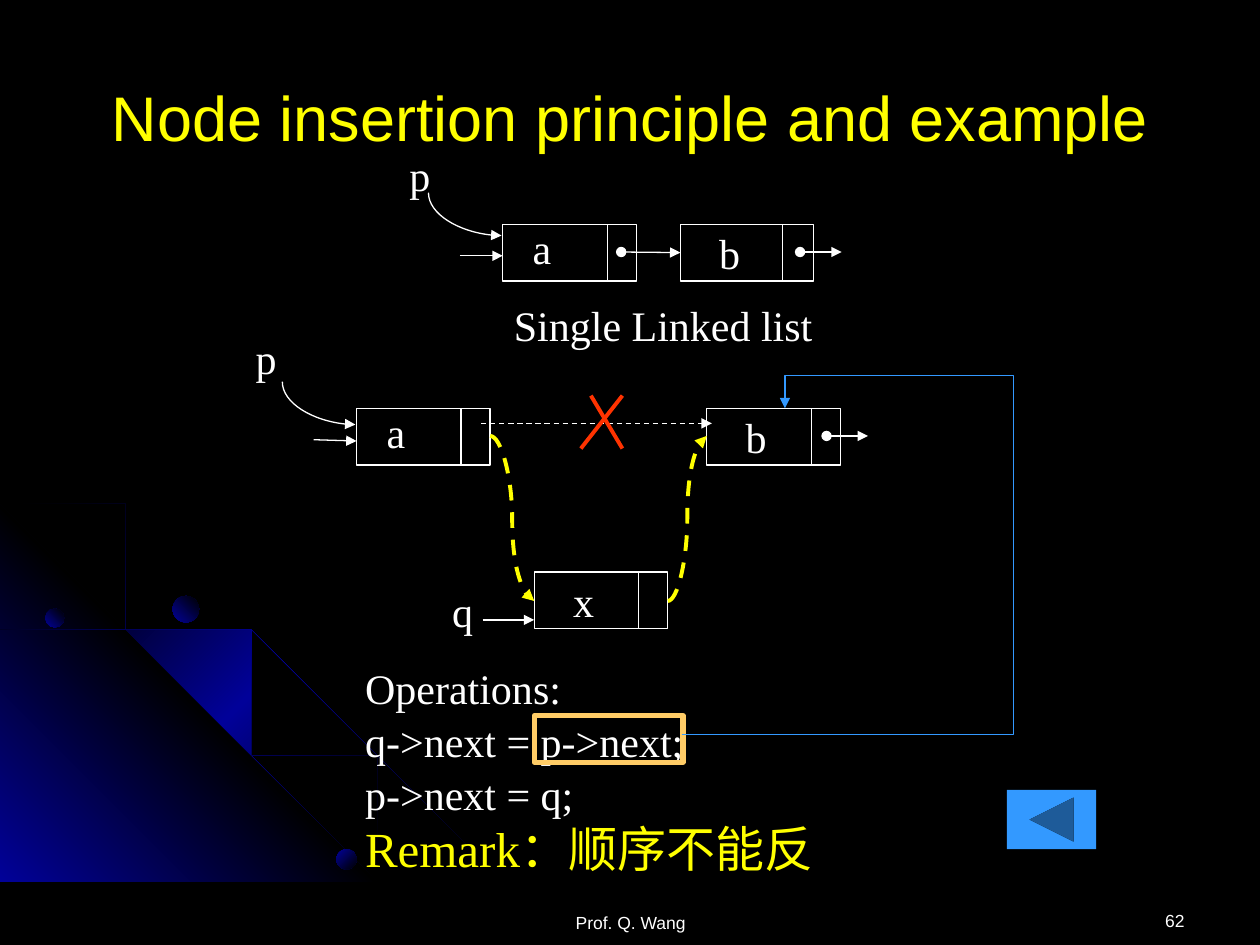
from dataclasses import dataclass
from typing import Optional

from lxml.etree import SubElement
from pptx import Presentation
from pptx.dml.color import RGBColor as RGB
from pptx.enum.dml import MSO_LINE_DASH_STYLE as Dash
from pptx.enum.shapes import MSO_CONNECTOR as Link, MSO_SHAPE as Kind
from pptx.enum.text import MSO_ANCHOR as Anchor, PP_ALIGN as Align
from pptx.oxml.ns import qn
from pptx.util import Cm, Pt

HUES = {"black": "000000", "navy": "010199", "white": "FFFFFF", "yellow": "FFFF00",
        "red": "FF3300", "blue": "3399FF", "gold": "FFCC66"}
SERIF, SANS = "Times New Roman", "Arial"
WIDE, HIGH = 1.06, 0.45  # size of a list node


def size(inch: float) -> Cm:
    return Cm(inch * 2.54)


def hue(name: str) -> RGB:
    return RGB.from_string(HUES[name])


@dataclass
class Node:
    name: str
    x: float
    y: float
    cut: float = 0.83
    dx: float = 0.21
    dy: float = -0.04


@dataclass
class Wire:
    x1: float
    y1: float
    x2: float
    y2: float
    color: str = "white"
    width: float = 0.75
    head: Optional[str] = None
    tail: Optional[str] = "triangle"
    dash: bool = False
    kind: Link = Link.STRAIGHT
    preset: Optional[str] = None
    turn: int = 0
    bends: tuple = ()


@dataclass
class Label:
    words: str
    x: float
    y: float
    w: float = 0.37
    pt: float = 24
    font: str = SERIF
    align: Align = Align.LEFT
    top: float = 0.05


deck = Presentation()
deck.slide_width, deck.slide_height = size(10), size(7.5)
slide = deck.slides.add_slide(deck.slide_layouts[5])
slide.background.fill.solid()
slide.background.fill.fore_color.rgb = hue("black")
shapes = slide.shapes


def add_run(par, words: str, pt: float, font: str, color: str) -> None:
    run = par.add_run()
    run.text = words
    run.font.size, run.font.name = Pt(pt), font
    run.font.color.rgb = hue(color)


def add_box(kind: Kind, x: float, y: float, w: float, h: float):
    box = shapes.add_shape(kind, size(x), size(y), size(w), size(h))
    box.shadow.inherit = False
    box.fill.background()
    box.line.fill.background()
    return box


def add_frame(x: float, y: float, w: float, h: float, color: str, width: float):
    box = add_box(Kind.RECTANGLE, x, y, w, h)
    box.line.color.rgb, box.line.width = hue(color), Pt(width)
    return box


def shade(shape, names: tuple, angle: int) -> None:
    """Fill with evenly spaced gradient stops."""
    shape.fill.solid()
    old = shape.element.spPr.find(qn("a:solidFill"))
    grad = old.makeelement(qn("a:gradFill"), {"rotWithShape": "1"})
    stops = SubElement(grad, qn("a:gsLst"))
    for i, name in enumerate(names):
        stop = SubElement(stops, qn("a:gs"), pos=str(100000 * i // (len(names) - 1)))
        SubElement(stop, qn("a:srgbClr"), val=HUES[name])
    SubElement(grad, qn("a:lin"), ang=str(angle * 60000), scaled="1")
    shape.element.spPr.replace(old, grad)


def add_path(points: list, names: tuple, angle: int) -> None:
    pen = shapes.build_freeform(*points[0], scale=float(size(1)))
    pen.add_line_segments(points[1:], close=True)
    path = pen.convert_to_shape()
    path.shadow.inherit = False
    path.line.fill.background()
    shade(path, names, angle)


def add_label(item: Label) -> None:
    box = shapes.add_textbox(size(item.x), size(item.y), size(item.w), size(0.5))
    frame = box.text_frame
    frame.word_wrap = item.font == SANS
    frame.margin_top = size(item.top)
    par = frame.paragraphs[0]
    par.alignment = item.align
    if item.font == SERIF:
        par.line_spacing = 1.05
    add_run(par, item.words, item.pt, item.font, "white")


def add_wire(item: Wire):
    wire = shapes.add_connector(item.kind, size(item.x1), size(item.y1),
                                size(item.x2), size(item.y2))
    wire.line.color.rgb, wire.line.width = hue(item.color), Pt(item.width)
    if item.dash:
        wire.line.dash_style = Dash.DASH
    props = wire.element.spPr
    for tag, end in (("a:headEnd", item.head), ("a:tailEnd", item.tail)):
        if end:
            SubElement(props.find(qn("a:ln")), qn(tag), type=end)
    SubElement(props, qn("a:effectLst"))
    geom = props.find(qn("a:prstGeom"))
    if item.preset:
        geom.set("prst", item.preset)
    for i, bend in enumerate(item.bends, 1):
        SubElement(geom.find(qn("a:avLst")), qn("a:gd"), name=f"adj{i}",
                   fmla=f"val {round(bend * 100000)}")
    if item.turn:
        props.find(qn("a:xfrm")).set("rot", str(item.turn * 60000))
    return wire


def add_node(item: Node):
    box = add_frame(item.x, item.y, WIDE, HIGH, "white", 0.75)
    cut = item.x + item.cut
    add_wire(Wire(cut, item.y, cut, item.y + HIGH, tail=None))
    add_label(Label(item.name, item.x + item.dx, item.y + item.dy))
    return box


# Backdrop: corner glow, three arcs, three beads
ARCS = [
    [(0.57, 4.47), (0, 4.35), (0, 4.38), (0.56, 4.49), (0.97, 4.61), (1.35, 4.78),
     (1.73, 4.99), (2.08, 5.23), (2.41, 5.49), (2.71, 5.79), (2.98, 6.12), (3.23, 6.49),
     (3.5, 6.98), (3.7, 7.49), (3.72, 7.49), (3.52, 6.98), (3.25, 6.48), (3, 6.11),
     (2.72, 5.78), (2.42, 5.48), (2.09, 5.21), (1.74, 4.97), (1.36, 4.77), (0.98, 4.59)],
    [(2.85, 7.14), (3.01, 7.49), (3.03, 7.49), (2.86, 7.12), (2.66, 6.76), (2.42, 6.4),
     (2.15, 6.06), (1.84, 5.76), (1.52, 5.49), (1.17, 5.26), (0.79, 5.05), (0.41, 4.88),
     (0, 4.75), (0, 4.77), (0.39, 4.9), (0.77, 5.07), (1.15, 5.28), (1.5, 5.51),
     (1.83, 5.78), (2.13, 6.08), (2.4, 6.41), (2.65, 6.77)],
    [(0, 4.42), (0, 4.44), (0.36, 4.57), (0.74, 4.75), (1.09, 4.94), (1.42, 5.18),
     (1.73, 5.44), (2.02, 5.75), (2.27, 6.05), (2.52, 6.41), (2.8, 6.94), (3.01, 7.49),
     (3.03, 7.49), (2.82, 6.93), (2.54, 6.39), (2.29, 6.03), (2.04, 5.73), (1.75, 5.43),
     (1.44, 5.16), (1.11, 4.93), (0.76, 4.73), (0.39, 4.55)],
]
GLOW = [(3.22, 7.49), (0, 7.49), (0, 4.27)]
add_path(ARCS[0], ("black", "navy", "black"), 45)
add_path(GLOW, ("navy", "black", "navy"), 315)
for arc in ARCS[1:]:
    add_path(arc, ("black", "navy", "black"), 45)
for x, y, d, angle in ((0.36, 4.83, 0.15, 315), (2.67, 6.74, 0.16, 45), (1.37, 4.73, 0.21, 315)):
    shade(add_box(Kind.OVAL, x, y, d, d), ("navy", "black"), angle)

# Title
title = shapes.title
title.left, title.top, title.width, title.height = map(size, (0.5, 0.3, 9, 1.25))
title.text_frame.vertical_anchor = Anchor.MIDDLE
head = title.text_frame.paragraphs[0]
head.alignment = Align.CENTER
add_run(head, "Node insertion principle and example", 36, SANS, "yellow")

# List nodes before and after the insertion
add_node(Node("a", 3.99, 1.78, dx=0.14, dy=-0.08))
second = add_node(Node("b", 5.4, 1.78, cut=0.81))
add_node(Node("a", 2.83, 3.24, dx=0.14, dy=-0.08))
add_node(Node("b", 5.61, 3.24))
add_node(Node("x", 4.24, 4.54))

# Labels and footer
for label in (
    Label("p", 3.15, 1.12), Label("p", 1.93, 2.57), Label("q", 3.49, 4.58),
    Label("Single Linked list", 3.98, 2.31, 2.59),
    Label("62", 7.17, 7.01, 2.33, 10, SANS, Align.RIGHT, 0.21),
    Label("Prof. Q. Wang", 3.42, 7.03, 3.17, 10, SANS, Align.CENTER, 0.21),
):
    add_label(label)

# Operations
steps = shapes.add_textbox(size(2.8), size(5.19), size(3.76), size(1.77)).text_frame
steps.word_wrap = True
for i, (words, pt, color) in enumerate((
    ("Operations:", 24, "white"), ("q->next = p->next;", 24, "white"),
    ("p->next = q;", 24, "white"), ("Remark：顺序不能反", 28, "yellow"),
)):
    par = steps.add_paragraph() if i else steps.paragraphs[0]
    if pt == 24:
        par.line_spacing = 1.05
    add_run(par, words, pt, SERIF, color)
add_frame(4.24, 5.68, 1.18, 0.37, "gold", 3)

# Pointers
add_wire(Wire(4.93, 2, 5.4, 2, head="oval")).end_connect(second, 1)
for wire in (
    Wire(6.35, 2, 6.68, 2, head="oval"),
    Wire(6.56, 3.46, 6.89, 3.46, head="oval"),
    Wire(3.65, 2.03, 3.99, 2.03),
    Wire(2.49, 3.49, 2.83, 3.5),
    Wire(3.83, 4.92, 4.24, 4.92),
    Wire(3.82, 3.36, 5.65, 3.36, dash=True),
    Wire(4.69, 3.14, 4.94, 3.56, "red", 2.25, tail=None),
    Wire(4.94, 3.14, 4.61, 3.56, "red", 2.25, tail=None),
    Wire(5.41, 5.83, 6.23, 3.24, "blue", kind=Link.ELBOW, preset="bentConnector4",
         bends=(3.21, 1.1)),
    Wire(3.89, 3.46, 4.24, 4.77, "yellow", 2.25, dash=True, kind=Link.CURVE),
    Wire(5.3, 4.77, 5.61, 3.46, "yellow", 2.25, dash=True, kind=Link.CURVE),
):
    add_wire(wire)
for x, y in ((3.52, 1.41), (2.36, 2.91)):
    add_wire(Wire(x + 0.34, y, x, y + 0.58, kind=Link.CURVE, preset="curvedConnector2", turn=270))

# Back button
back = add_box(Kind.ACTION_BUTTON_BACK_OR_PREVIOUS, 7.99, 6.27, 0.71, 0.47)
back.fill.solid()
back.fill.fore_color.rgb = hue("blue")

deck.save("out.pptx")
